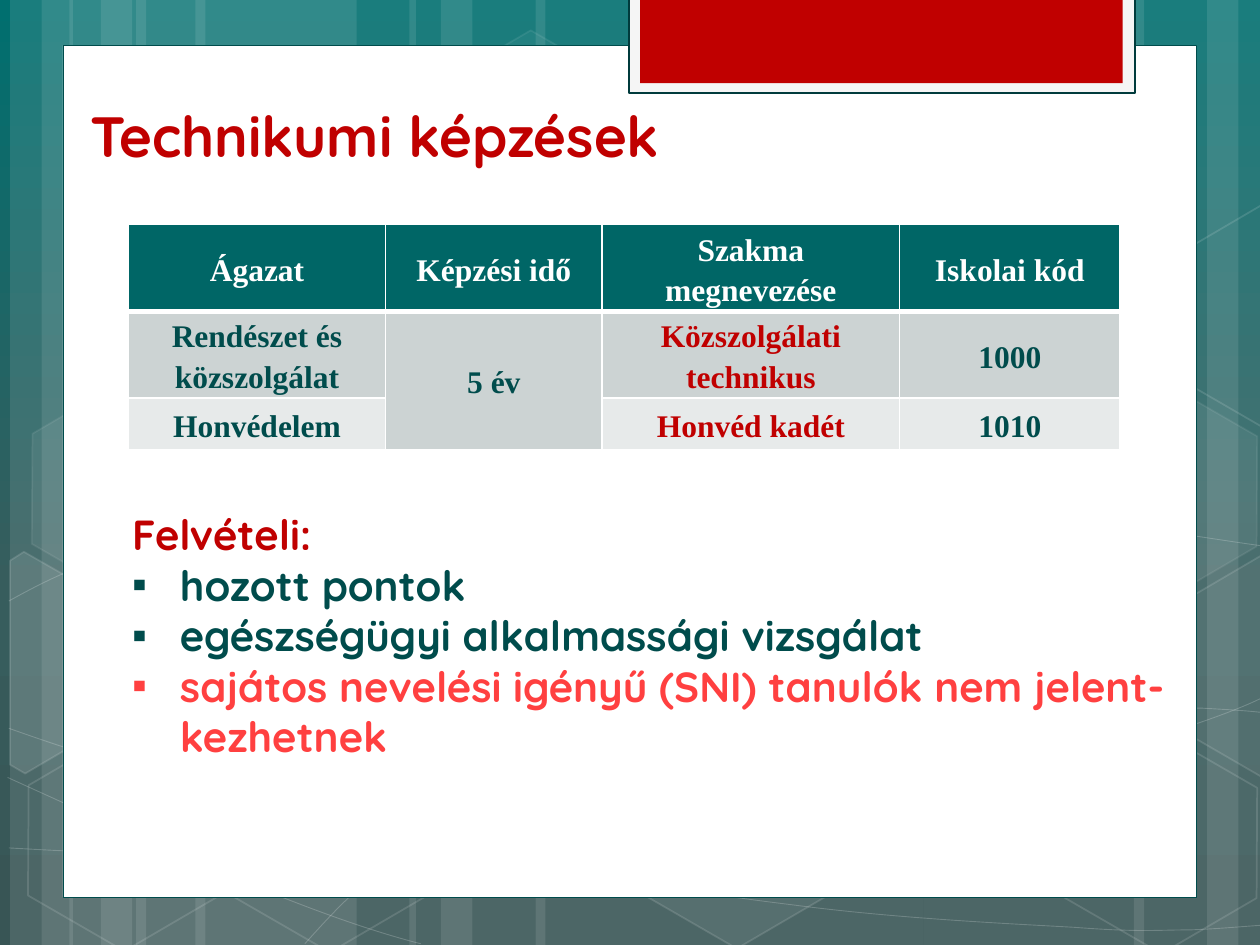
from copy import deepcopy
from itertools import product

from lxml.etree import SubElement
from pptx import Presentation
from pptx.dml.color import RGBColor
from pptx.enum.shapes import MSO_SHAPE as Shape
from pptx.enum.text import MSO_ANCHOR as Anchor, PP_ALIGN as Align
from pptx.oxml.ns import qn
from pptx.util import Inches, Pt

WHITE, RED, DARK, CORAL = "FFFFFF", "C00000", "004C4C", "FF4040"
GRADIENT = [(0, "006F6F"), (0.62, "375D5D"), (1, "385555")]
BARS = [(1.08, 1.75), (0.08, 0.5), (0.33, 0.83), (1.55, 1.75), (0.55, 0.5), (0.8, 0.83),
        (7.33, 1.75), (9.58, 0.5), (9, 0.83), (4.25, 3.08), (3.25, 0.5), (3.5, 0.83)]
CURVES = [
    [(0.07, 6.73), (0.61, 6.76), (1.15, 6.79), (1.9, 6.78), (2.65, 6.77), (3.58, 6.75),
     (4.58, 6.65), (5.58, 6.55), (7, 6.36), (7.92, 6.17), (8.83, 5.98), (9.77, 5.68),
     (10.07, 5.51)],
    [(0.07, 4.77), (0.36, 4.61), (0.65, 4.46), (1.21, 4.31), (1.78, 4.16), (2.59, 3.94),
     (3.47, 3.87), (4.36, 3.8), (5.44, 3.79), (6.54, 3.87), (7.64, 3.95), (9.47, 4.26),
     (10.07, 4.34)],
    [(0.06, 6.17), (1.27, 6.72), (2.47, 7.27), (3.34, 7.49)],
    [(0.07, 5.78), (0.38, 5.89), (0.7, 6), (1.28, 6.16), (1.86, 6.31), (2.73, 6.56),
     (3.57, 6.73), (4.4, 6.9), (5.45, 7.08), (6.28, 7.18), (7.11, 7.29), (8, 7.33),
     (8.53, 7.36), (9.05, 7.4), (9.19, 7.38), (9.45, 7.38), (9.71, 7.37), (9.89, 7.35),
     (10.07, 7.34)],
    [(2.42, 7.49), (2.6, 7.29), (2.78, 7.09), (3.02, 6.91), (3.26, 6.73), (3.6, 6.53),
     (3.88, 6.39), (4.16, 6.25), (4.33, 6.19), (4.7, 6.09), (5.06, 5.99), (5.73, 5.85),
     (6.08, 5.78), (6.44, 5.71), (6.49, 5.71), (6.8, 5.69), (7.11, 5.66), (7.6, 5.63),
     (7.94, 5.62), (8.29, 5.61), (8.86, 5.62), (8.86, 5.62), (9.08, 5.62), (9.31, 5.62),
     (9.53, 5.62), (9.71, 5.63), (9.88, 5.64), (9.97, 5.65), (10.06, 5.66), (10.03, 5.65),
     (10.06, 5.66)],
]
HEXAGONS = [(3.34, 0.36, 4, 8), (4.97, 5.89, 6, 12), (0.11, 5.91, 0, 12),
            (0.14, 3.12, 7, 8), (1.74, 5.92, 0, 12), (7.53, 4.53, 10, 12),
            (8.34, 5.93, 0, 12), (8.34, 3.14, 7, 8)]
CUT_HEXAGONS = [
    ([(0.08, 4.45), (0.19, 4.38), (0.96, 4.82), (0.95, 5.7), (0.2, 6.14), (0.08, 6.07)], 10),
    ([(9.26, 4.85), (10.01, 4.41), (10.09, 4.46), (10.09, 6.13), (10.02, 6.17),
      (9.26, 5.73)], 4),
    ([(9.26, 2.07), (10.01, 1.63), (10.1, 1.68), (10.09, 3.35), (10.02, 3.39),
      (9.26, 2.95)], 0),
]
ROWS = [["Ágazat", "Képzési idő", "Szakma megnevezése", "Iskolai kód"],
        ["Rendészet és közszolgálat", "5 év", "Közszolgálati technikus", "1000"],
        ["Honvédelem", "", "Honvéd kadét", "1010"]]
ADMISSION = [("Felvételi:", RED), ("hozott pontok", DARK),
             ("egészségügyi alkalmassági vizsgálat", DARK),
             ("sajátos nevelési igényű (SNI) tanulók nem jelent-kezhetnek", CORAL)]


def color(code):
    """Turn a hex string into a colour."""
    return RGBColor.from_string(code)


def paint(shape, fill=None, line=None, width=1, fill_alpha=100, line_alpha=100):
    """Set the fill, outline and opacity of a shape."""
    shape.shadow.inherit = False
    for paint_format, code, alpha in ((shape.fill, fill, fill_alpha),
                                      (shape.line.fill, line, line_alpha)):
        if not code or not alpha:
            paint_format.background()
            continue
        paint_format.solid()
        paint_format.fore_color.rgb = color(code)
    if line:
        shape.line.width = Pt(width)
    properties = shape.element.spPr
    for parent, alpha in ((properties, fill_alpha), (properties.find(qn("a:ln")), line_alpha)):
        solid = parent.find(qn("a:solidFill"))
        if solid is not None and alpha < 100:
            SubElement(solid[0], qn("a:alpha"), val=str(alpha * 1000))


def add_block(page, box, kind=Shape.RECTANGLE, **look):
    """Add a painted preset shape in the given box."""
    shape = page.shapes.add_shape(kind, *map(Inches, box))
    paint(shape, **look)
    return shape


def add_outline(page, points, close, **look):
    """Add a painted freeform through points in inches."""
    start, *others = [(x * 100, y * 100) for x, y in points]
    builder = page.shapes.build_freeform(*start, scale=Inches(0.01))
    builder.add_line_segments(others, close=close)
    shape = builder.convert_to_shape()
    paint(shape, **look)
    return shape


def add_curve(page, controls):
    """Add a faint line whose points are cubic control points."""
    shape = add_outline(page, controls, False, line=WHITE, width=0.5, line_alpha=20)
    outline = next(shape.element.iter(qn("a:path")))
    segments = outline.findall(qn("a:lnTo"))
    for index, segment in enumerate(segments):
        if index % 3 == 0:
            curve = SubElement(outline, qn("a:cubicBezTo"))
        curve.append(segment[0])
        outline.remove(segment)


def add_backdrop(page, height):
    """Draw the gradient, stripes, curves and hexagons."""
    fill = page.background.fill
    fill.gradient()
    fill.gradient_angle = 270
    stops = next(page.element.iter(qn("a:gsLst")))
    stops.append(deepcopy(stops[-1]))
    for stop, (position, code) in zip(fill.gradient_stops, GRADIENT):
        stop.position = position
        stop.color.rgb = color(code)
    for left, width in BARS:
        add_block(page, (left, 0, width, height), fill=WHITE, fill_alpha=10)
    for controls in CURVES:
        add_curve(page, controls)
    for left, top, fill_alpha, line_alpha in HEXAGONS:
        hexagon = add_block(page, (left, top, 1.75, 1.52), Shape.HEXAGON, fill=WHITE,
                            line=WHITE, fill_alpha=fill_alpha, line_alpha=line_alpha)
        hexagon.rotation = 30
        hexagon.adjustments[0] = 0.285
    for points, alpha in CUT_HEXAGONS:
        add_outline(page, points, True, fill=WHITE, line=WHITE, fill_alpha=alpha, line_alpha=12)


def add_panel(page, box):
    """Draw the white panel with the red tab at its top."""
    add_block(page, box, fill=WHITE, line=DARK, width=0.5)
    left = box[0] + 4.49
    add_block(page, (left, -0.02, 4.02, 0.76), fill="F5F5F5", line="003B3C", width=1.25)
    add_block(page, (left + 0.09, -0.02, 3.83, 0.68), fill=RED)


def style(para, size, font, code):
    """Format the runs of a paragraph in bold."""
    for span in para.runs:
        span.font.size, span.font.name, span.font.bold = Pt(size), font, True
        span.font.color.rgb = color(code)


def add_text(page, box, lines, size, anchor=Anchor.TOP):
    """Write coloured lines, with bullets after the first."""
    frame = page.shapes.add_textbox(*map(Inches, box)).text_frame
    frame.word_wrap = True
    frame.vertical_anchor = anchor
    frame.text = "\n".join(text for text, _ in lines)
    for index, (para, (_, code)) in enumerate(zip(frame.paragraphs, lines)):
        style(para, size, "Quicksand", code)
        if index:
            properties = para._p.get_or_add_pPr()
            properties.set("marL", str(Inches(0.38)))
            properties.set("indent", str(-Inches(0.38)))
            SubElement(properties, qn("a:buFont"), typeface="Times New Roman")
            SubElement(properties, qn("a:buChar"), char="▪")


def add_borders(cell):
    """Give a heading cell white borders, heavier below."""
    properties = cell._tc.get_or_add_tcPr()
    for side, width in (("L", 1), ("R", 1), ("T", 1), ("B", 3)):
        line = SubElement(properties, qn(f"a:ln{side}"), w=str(Pt(width)))
        SubElement(SubElement(line, qn("a:solidFill")), qn("a:srgbClr"), val=WHITE)


def add_courses(page, box):
    """Build the table of courses."""
    table = page.shapes.add_table(3, 4, *map(Inches, box)).table
    for column, width in zip(table.columns, (2.04, 1.72, 2.36, 1.75)):
        column.width = Inches(width)
    for row, height in zip(table.rows, (0.69, 0.41, 0.41)):
        row.height = Inches(height)
    table.cell(1, 1).merge(table.cell(2, 1))
    for row, column in product(range(3), range(4)):
        cell = table.cell(row, column)
        if row == 0:
            add_borders(cell)
        cell.fill.solid()
        cell.fill.fore_color.rgb = color(("006666", "CCD3D3", "E7EAEA")[row])
        cell.margin_left = cell.margin_right = Inches(0.07)
        cell.margin_top = cell.margin_bottom = 0
        cell.vertical_anchor = Anchor.MIDDLE
        para = cell.text_frame.paragraphs[0]
        para.text = ROWS[row][column]
        para.alignment, para.line_spacing = Align.CENTER, 1.15
        body = RED if column == 2 else DARK
        style(para, 18, "Times New Roman", body if row else WHITE)


def main():
    """Build and save the deck."""
    deck = Presentation()
    deck.slide_width, deck.slide_height = Inches(10), Inches(7.5)
    page = deck.slides.add_slide(deck.slide_layouts[6])
    add_backdrop(page, 7.5)
    add_panel(page, (0.5, 0.36, 9, 6.76))
    add_text(page, (0.62, 0.76, 8.37, 0.63), [("Technikumi képzések", RED)], 32.4, Anchor.BOTTOM)
    add_courses(page, (1.02, 1.78, 7.87, 1.76))
    add_text(page, (0.95, 3.99, 8.46, 2.12), ADMISSION, 24)
    deck.save("out.pptx")


if __name__ == "__main__":
    main()
